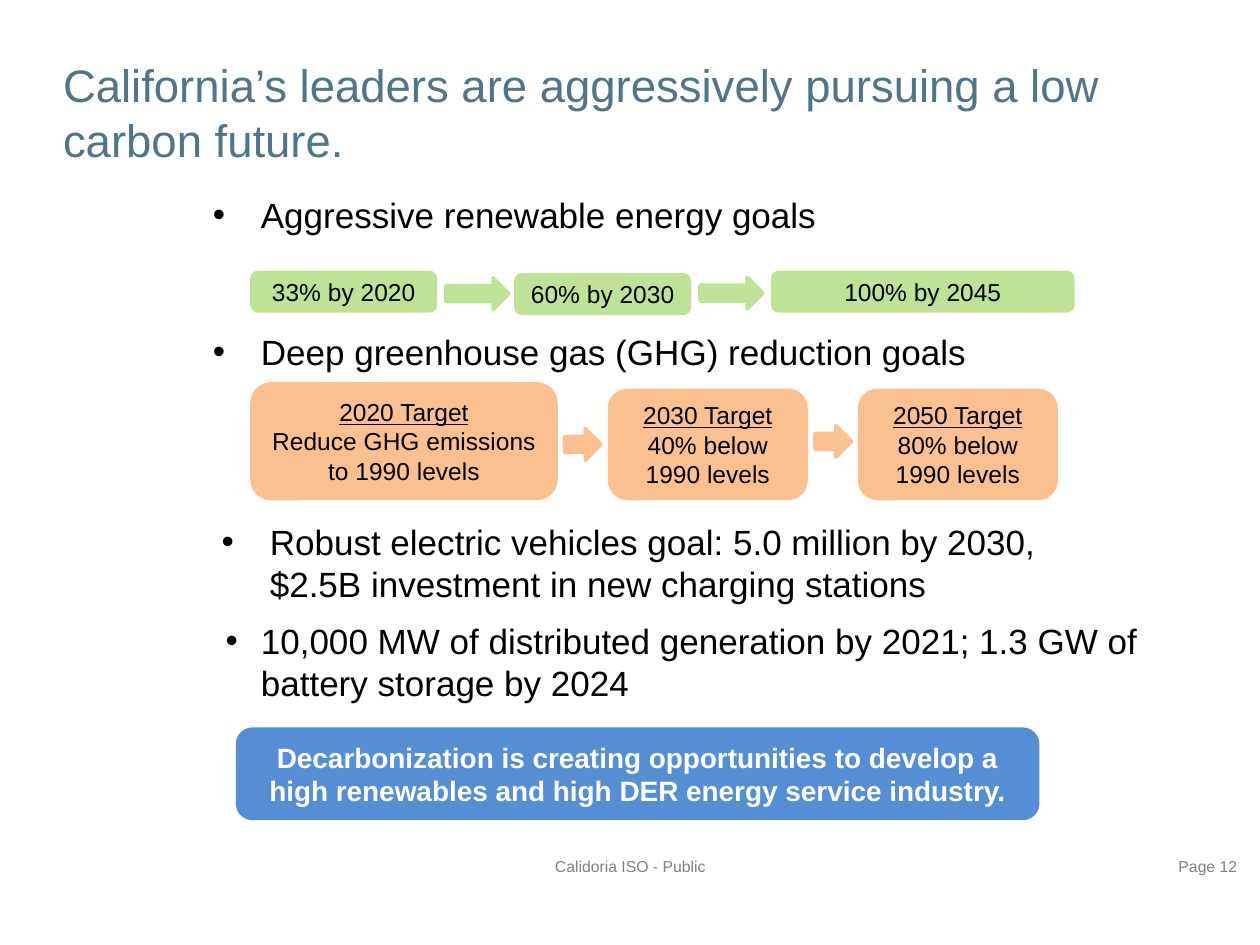
from lxml import etree
from pptx import Presentation
from pptx import util as u
from pptx.dml.color import RGBColor
from pptx.enum import shapes, text
from pptx.oxml.ns import qn

COLORS = {"title": "4F758B", "body": "000000", "footer": "808080", "white": "FFFFFF",
          "renewables": "BEE396", "emissions": "FAC090", "message": "558ED5"}
CENTER = text.PP_ALIGN.CENTER

prs = Presentation()
prs.slide_width, prs.slide_height = u.Cm(25.4), u.Cm(19.05)
slide = prs.slides.add_slide(prs.slide_layouts[5])


def write(frame, lines, size, color, align=text.PP_ALIGN.LEFT, indent=0):
    frame.word_wrap = True
    frame.text = "\n".join(lines)
    for paragraph in frame.paragraphs:
        if indent:
            properties = paragraph._p.get_or_add_pPr()
            properties.set("marL", str(u.Cm(indent)))
            properties.set("indent", str(-u.Cm(indent)))
            etree.SubElement(properties, qn("a:buFont"), typeface="Arial")
            etree.SubElement(properties, qn("a:buChar"), char="•")
        paragraph.alignment = align
        paragraph.font.name = "Arial"
        paragraph.font.size = u.Pt(size)
        paragraph.font.color.rgb = RGBColor.from_string(COLORS[color])


def add_block(kind, box, color):
    block = slide.shapes.add_shape(kind, *map(u.Cm, box))
    block.shadow.inherit = False
    block.fill.solid()
    block.fill.fore_color.rgb = RGBColor.from_string(COLORS[color])
    block.line.color.rgb = RGBColor.from_string(COLORS[color])
    block.line.width = u.Pt(2)
    return block


title = slide.shapes.title
title.left, title.top, title.width, title.height = map(u.Cm, (1.09, 1.05, 22.86, 1.4))
heading = title.text_frame
heading.margin_left = heading.margin_right = u.Cm(0.18)
heading.margin_top = heading.margin_bottom = u.Cm(0.1)
heading.vertical_anchor = text.MSO_ANCHOR.TOP
heading.auto_size = text.MSO_AUTO_SIZE.NONE
write(heading, ["California’s leaders are aggressively pursuing a low carbon future."], 26, "title")

goals = [
    ((4.11, 3.81, 17.15, 0.97), 0.97, "Aggressive renewable energy goals"),
    ((4.11, 6.56, 17.15, 0.97), 0.97, "Deep greenhouse gas (GHG) reduction goals"),
    ((4.29, 10.39, 17.15, 1.55), 0.97,
     "Robust electric vehicles goal: 5.0 million by 2030, $2.5B investment in new charging stations"),
    ((4.37, 12.38, 19, 1.9), 0.71,
     "10,000 MW of distributed generation by 2021; 1.3 GW of battery storage by 2024"),
]
for box, indent, goal in goals:
    frame = slide.shapes.add_textbox(*map(u.Cm, box)).text_frame
    frame.margin_left = frame.margin_right = u.Cm(0.18)
    frame.margin_top = frame.margin_bottom = u.Cm(0.1)
    write(frame, [goal], 20, "body", indent=indent)

targets = [
    ("renewables", (5.08, 5.49, 3.7, 0.78), ["33% by 2020"]),
    ("renewables", (10.4, 5.54, 3.5, 0.78), ["60% by 2030"]),
    ("renewables", (15.58, 5.49, 6.05, 0.78), ["100% by 2045"]),
    ("emissions", (5.08, 7.74, 6.13, 2.31), ["2020 Target", "Reduce GHG emissions to 1990 levels"]),
    ("emissions", (12.29, 7.87, 3.96, 2.18), ["2030 Target", "40% below 1990 levels"]),
    ("emissions", (17.33, 7.87, 3.96, 2.18), ["2050 Target", "80% below 1990 levels"]),
]
for color, box, lines in targets:
    target = add_block(shapes.MSO_SHAPE.ROUNDED_RECTANGLE, box, color)
    target.text_frame.vertical_anchor = text.MSO_ANCHOR.MIDDLE
    write(target.text_frame, lines, 14, "body", CENTER)
    if len(lines) > 1:
        target.text_frame.paragraphs[0].font.underline = True

steps = [("renewables", 8.99, 5.6, 1.27), ("renewables", 14.11, 5.59, 1.27),
         ("emissions", 11.38, 8.64, 0.74), ("emissions", 16.43, 8.58, 0.74)]
for color, left, top, width in steps:
    add_block(shapes.MSO_SHAPE.RIGHT_ARROW, (left, top, width, 0.64), color)

message = add_block(shapes.MSO_SHAPE.ROUNDED_RECTANGLE, (4.79, 14.7, 16.13, 1.8), "message")
message.text_frame.vertical_anchor = text.MSO_ANCHOR.MIDDLE
write(message.text_frame,
      ["Decarbonization is creating opportunities to develop a high renewables "
       "and high DER energy service industry."], 16, "white", CENTER)
message.text_frame.paragraphs[0].font.bold = True

for left, label, align in [(10.8, "Calidoria ISO - Public", CENTER),
                           (21.38, "Page 12", text.PP_ALIGN.RIGHT)]:
    footer = slide.shapes.add_textbox(u.Cm(left), u.Cm(17.15), u.Cm(3.81), u.Cm(0.64))
    write(footer.text_frame, [label], 9, "footer", align)

prs.save("out.pptx")
